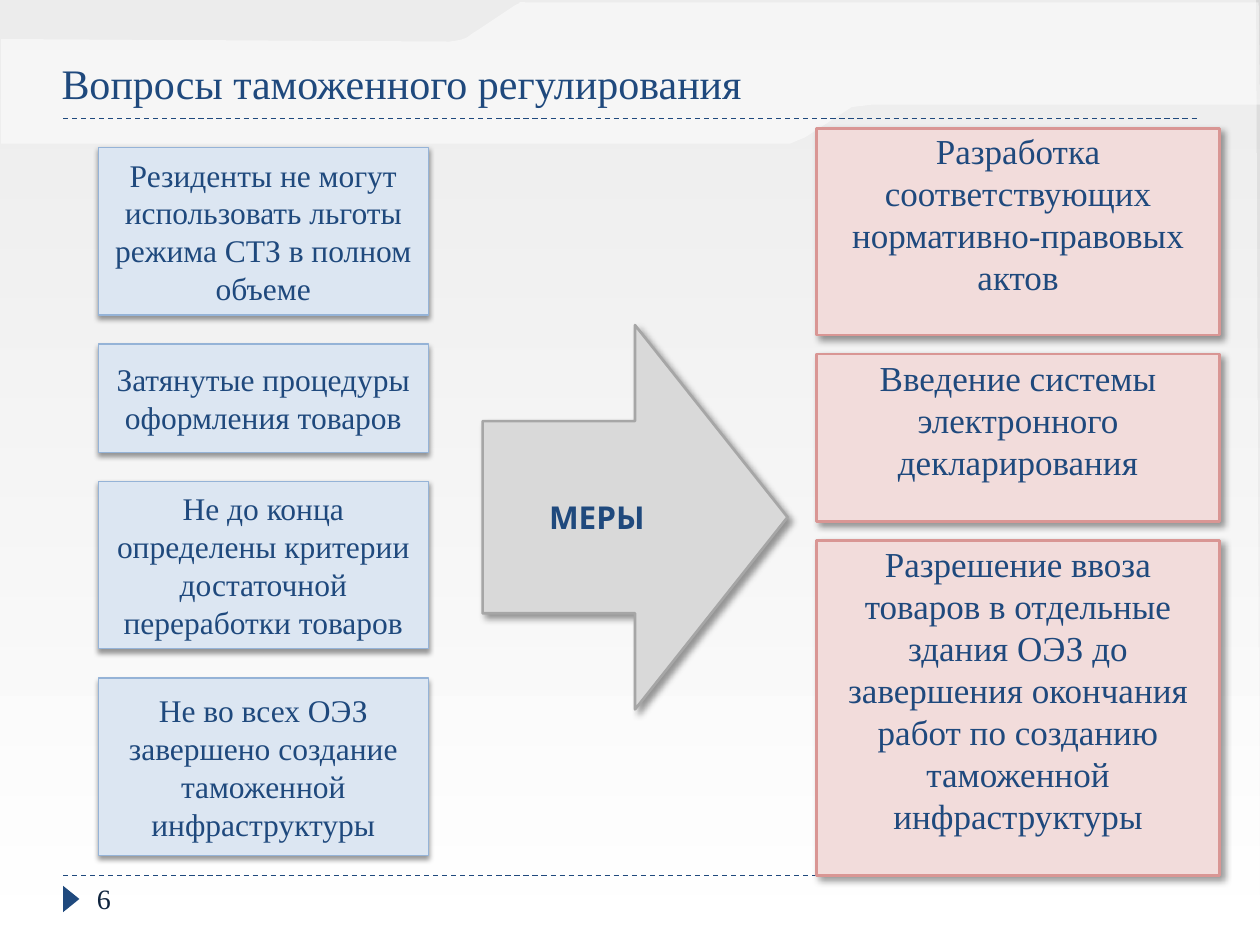
from dataclasses import dataclass

from lxml.etree import SubElement
from pptx import Presentation
from pptx.dml.color import RGBColor
from pptx.enum.dml import MSO_LINE
from pptx.enum.shapes import MSO_CONNECTOR, MSO_SHAPE
from pptx.enum.text import MSO_ANCHOR, PP_ALIGN
from pptx.oxml.ns import qn
from pptx.util import Inches, Pt

TITLE = "Вопросы таможенного регулирования"
PAGE = "6"
ARROW_LABEL = "МЕРЫ"
PROBLEMS = [
    ("Резиденты не могут использовать льготы режима СТЗ в полном объеме", 1.33),
    ("Затянутые процедуры оформления товаров", 0.86),
    ("Не до конца определены критерии достаточной переработки товаров", 1.33),
    ("Не во всех ОЭЗ завершено создание таможенной инфраструктуры", 1.41),
]
MEASURES = [
    ("Разработка соответствующих нормативно-правовых актов", 1.64),
    ("Введение системы электронного декларирования", 1.33),
    ("Разрешение ввоза товаров в отдельные здания ОЭЗ до завершения "
     "окончания работ по созданию таможенной инфраструктуры", 2.66),
]
VEIL = [[(-0.02, 7.49)], [(10, 7.5)], [(9.97, 0)], [(-0.03, 0)]]
RIBBON = [
    [(9.99, 0.02)], [(4.27, 0.02)],
    [(4.02, 0.02), (4.19, 0), (4.09, 0.04)],
    [(3.79, 0.24)],
    [(3.7, 0.29), (3.73, 0.31), (3.57, 0.33)],
    [(1.88, 0.32), (0.01, 0.31), (0.01, 0.31)],
    [(0.01, 1.14)], [(6.27, 1.14)], [(6.39, 1.09)], [(6.76, 0.85)],
    [(6.93, 0.83)], [(10, 0.83)],
]
RULES = (6.95, 0.94)
CURVE_STEPS = 8


@dataclass(frozen=True)
class Theme:
    serif: str = "Times New Roman"
    sans: str = "Cabin"
    navy: str = "1F497D"
    page: str = "0F243E"
    white: str = "FFFFFF"
    backdrop: str = "D9D9D9"
    title_size: int = 24
    page_size: int = 16
    problem_size: int = 18
    measure_size: int = 20


@dataclass(frozen=True)
class Style:
    fill: str
    line: str
    width: float
    blur: float
    distance: float
    angle: int


THEME = Theme()
PROBLEM = Style("DCE6F2", "95B3D7", 0.75, 3, 2, 90)
MEASURE = Style("F2DCDB", "D99694", 1.5, 4, 3, 45)
ARROW = Style("D9D9D9", "A6A6A6", 1.5, 4, 3, 45)


def color(value):
    return RGBColor.from_string(value)


def write(shape, text, size, ink=THEME.navy, face=THEME.serif, bold=False,
          align=PP_ALIGN.LEFT, anchor=MSO_ANCHOR.TOP, insets=(0.1, 0.05, 0.1, 0.05)):
    frame = shape.text_frame
    frame.word_wrap = True
    frame.vertical_anchor = anchor
    (frame.margin_left, frame.margin_top,
     frame.margin_right, frame.margin_bottom) = map(Inches, insets)
    paragraph = frame.paragraphs[0]
    paragraph.text = text
    paragraph.alignment = align
    paragraph.font.name = face
    paragraph.font.size = Pt(size)
    paragraph.font.bold = bold
    paragraph.font.color.rgb = color(ink)
    return paragraph


def add_panel(slide, preset, box, style):
    panel = slide.shapes.add_shape(preset, *map(Inches, box))
    panel.fill.solid()
    panel.fill.fore_color.rgb = color(style.fill)
    panel.line.color.rgb = color(style.line)
    panel.line.width = Pt(style.width)
    panel.shadow.inherit = False
    effects = panel._element.spPr.find(qn("a:effectLst"))
    shadow = SubElement(effects, qn("a:outerShdw"), blurRad=str(Pt(style.blur)),
                        dist=str(Pt(style.distance)), dir=str(style.angle * 60000),
                        rotWithShape="0")
    tint = SubElement(shadow, qn("a:srgbClr"), val="000000")
    SubElement(tint, qn("a:alpha"), val="40000")
    return panel


def add_column(slide, items, left, top, width, gap, style, size, insets):
    for text, height in items:
        panel = add_panel(slide, MSO_SHAPE.RECTANGLE, (left, top, width, height), style)
        write(panel, text, size, align=PP_ALIGN.CENTER,
              anchor=MSO_ANCHOR.MIDDLE, insets=insets)
        top += height + gap


def flatten(segments):
    points = []
    for segment in segments:
        if len(segment) == 1:
            points += segment
            continue
        controls = [points[-1], *segment]
        for step in range(1, CURVE_STEPS + 1):
            t = step / CURVE_STEPS
            weights = ((1 - t) ** 3, 3 * t * (1 - t) ** 2, 3 * t * t * (1 - t), t ** 3)
            points.append(tuple(sum(w * c[axis] for w, c in zip(weights, controls))
                                for axis in (0, 1)))
    return [(Inches(x), Inches(y)) for x, y in points]


def add_translucent(slide, segments):
    start, *rest = flatten(segments)
    builder = slide.shapes.build_freeform(*start)
    builder.add_line_segments(rest, close=True)
    outline = builder.convert_to_shape()
    outline.fill.solid()
    outline.fill.fore_color.rgb = color(THEME.white)
    outline.line.fill.background()
    outline.shadow.inherit = False
    tint = outline._element.spPr.find(qn("a:solidFill")).find(qn("a:srgbClr"))
    SubElement(tint, qn("a:alpha"), val="50000")


def add_rule(slide, y):
    rule = slide.shapes.add_connector(MSO_CONNECTOR.STRAIGHT, Inches(0.5), Inches(y),
                                      Inches(9.5), Inches(y))
    rule.line.color.rgb = color(THEME.navy)
    rule.line.width = Pt(0.75)
    rule.line.dash_style = MSO_LINE.DASH
    SubElement(rule._element.spPr, qn("a:effectLst"))


def add_backdrop(slide):
    fill = slide.background.fill
    fill.gradient()
    fill.gradient_angle = 270
    for stop, position, value in zip(fill.gradient_stops, (0, 1),
                                     (THEME.backdrop, THEME.white)):
        stop.position = position
        stop.color.rgb = color(value)
    for segments in (VEIL, RIBBON):
        add_translucent(slide, segments)
    for y in RULES:
        add_rule(slide, y)
    marker = slide.shapes.add_shape(MSO_SHAPE.ISOSCELES_TRIANGLE, Inches(0.46),
                                    Inches(7.07), Inches(0.21), Inches(0.13))
    marker.rotation = 90
    marker.fill.solid()
    marker.fill.fore_color.rgb = color(THEME.navy)
    marker.line.fill.background()
    marker.shadow.inherit = False


def main():
    deck = Presentation()
    deck.slide_width, deck.slide_height = Inches(10), Inches(7.5)
    slide = deck.slides.add_slide(deck.slide_layouts[6])
    add_backdrop(slide)

    title = slide.shapes.add_textbox(Inches(0.39), 0, Inches(8.44), Inches(0.91))
    heading = write(title, TITLE, THEME.title_size, anchor=MSO_ANCHOR.BOTTOM)
    heading.line_spacing = 0.85
    page = slide.shapes.add_textbox(Inches(0.67), Inches(6.95), Inches(2.17), Inches(0.4))
    write(page, PAGE, THEME.page_size, THEME.page)

    add_column(slide, PROBLEMS, 0.78, 1.17, 2.62, 0.23, PROBLEM,
               THEME.problem_size, (0.1, 0.1, 0.1, 0.1))
    add_column(slide, MEASURES, 6.48, 1.02, 3.2, 0.15, MEASURE,
               THEME.measure_size, (0.1, 0, 0.1, 0.29))
    arrow = add_panel(slide, MSO_SHAPE.RIGHT_ARROW, (3.83, 2.58, 2.42, 3.05), ARROW)
    write(arrow, ARROW_LABEL, THEME.problem_size, face=THEME.sans, bold=True,
          align=PP_ALIGN.CENTER, anchor=MSO_ANCHOR.MIDDLE)
    deck.save("out.pptx")


if __name__ == "__main__":
    main()
